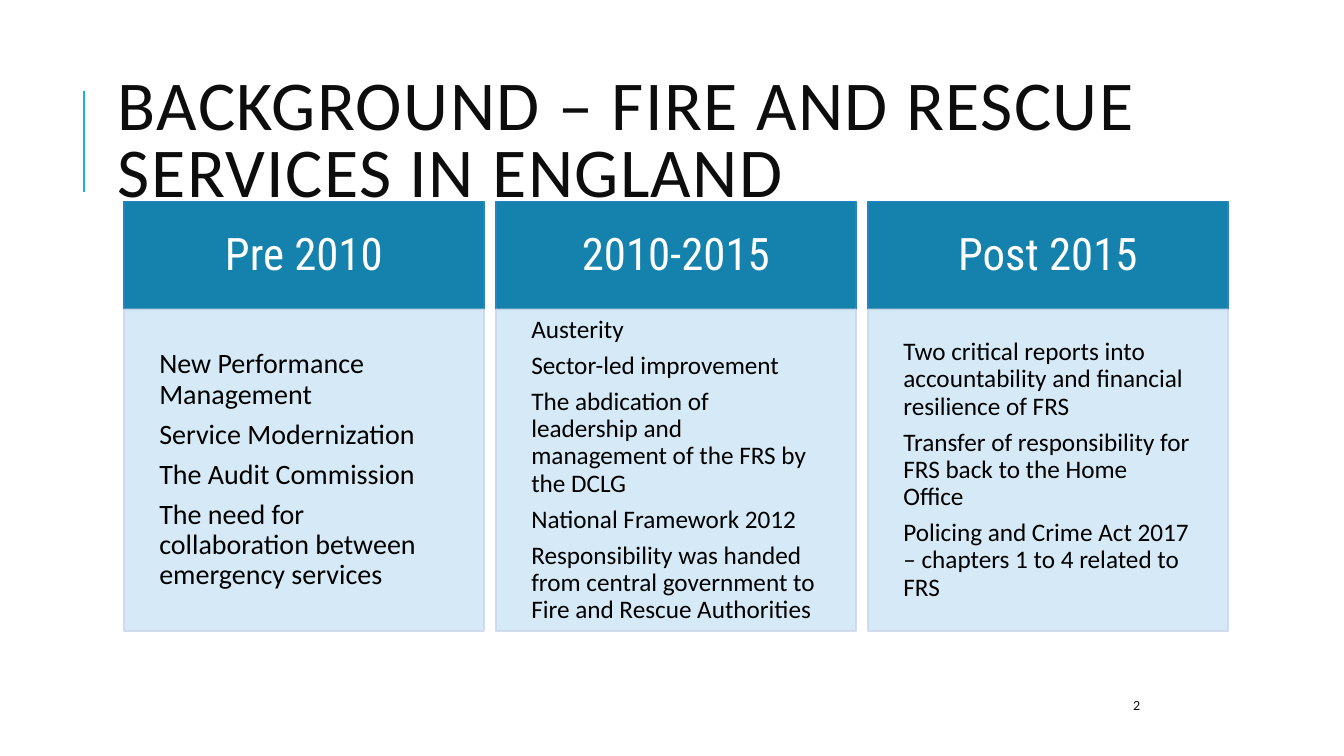
"""Build the slide on the background of fire and rescue services in England."""
import pptx
import pptx.dml.color
import pptx.enum.shapes
import pptx.enum.text
import pptx.oxml
import pptx.oxml.ns
import pptx.util
from pptx.util import Inches

TITLE = "BACKGROUND – FIRE AND RESCUE SERVICES IN ENGLAND"
PAGE_NUMBER = "2"
PERIODS = [
    ("Pre 2010", 20, [
        "New Performance Management",
        "Service Modernization",
        "The Audit Commission",
        "The need for collaboration between emergency services",
    ]),
    ("2010-2015", 18, [
        "Austerity",
        "Sector-led improvement",
        "The abdication of leadership and management of the FRS by the DCLG",
        "National Framework 2012",
        "Responsibility was handed from central government to Fire and Rescue Authorities",
    ]),
    ("Post 2015", 18, [
        "Two critical reports into accountability and financial resilience of FRS",
        "Transfer of responsibility for FRS back to the Home Office",
        "Policing and Crime Act 2017 – chapters 1 to 4 related to FRS",
    ]),
]
COLORS = {
    "accent": "1CADE4", "ink": "0D0D0D", "body": "000000", "white": "FFFFFF",
    "header": "1482AC", "header_edge": "2683C6",
    "panel": "D1E7F6", "panel_edge": "CDD9EA",
}
LEFT, TOP, WIDTH, PITCH = 1.23, 2, 3.57, 3.69
HEADER_HEIGHT, PANEL_HEIGHT = 1.07, 3.19


def rgb(name):
    return pptx.dml.color.RGBColor.from_string(COLORS[name])


def write(holder, lines, size, color, font="Calibri", inset=0.13, align="LEFT",
          line_spacing=1.0, space_after=0, tracking=0):
    frame = holder.text_frame
    frame.word_wrap = True
    frame.vertical_anchor = pptx.enum.text.MSO_ANCHOR.MIDDLE
    frame.margin_left = frame.margin_right = Inches(inset)
    frame.margin_top = frame.margin_bottom = Inches(inset)
    frame.text = "\n".join(lines)
    for paragraph in frame.paragraphs:
        paragraph.alignment = getattr(pptx.enum.text.PP_ALIGN, align)
        paragraph.line_spacing = line_spacing
        paragraph.space_before = pptx.util.Pt(0)
        paragraph.space_after = pptx.util.Pt(space_after)
        style = paragraph.runs[0].font
        style.name, style.size = font, pptx.util.Pt(size)
        style.color.rgb = rgb(color)
        if tracking:
            paragraph.runs[0]._r.get_or_add_rPr().set("spc", str(tracking * 100))


def add_box(slide, left, top, width, height, fill, edge, opacity=100):
    box = slide.shapes.add_shape(pptx.enum.shapes.MSO_SHAPE.RECTANGLE, Inches(left),
                                 Inches(top), Inches(width), Inches(height))
    box.shadow.inherit = False
    box.fill.solid()
    box.fill.fore_color.rgb = rgb(fill)
    box.line.color.rgb = rgb(edge)
    box.line.width = pptx.util.Pt(1.25)
    if opacity < 100:
        for color in box._element.spPr.iter(pptx.oxml.ns.qn("a:srgbClr")):
            alpha = color.makeelement(pptx.oxml.ns.qn("a:alpha"), {"val": str(opacity * 1000)})
            color.append(alpha)
    return box


def add_label(slide, left, top, width, height, text, **style):
    label = slide.shapes.add_textbox(Inches(left), Inches(top), Inches(width), Inches(height))
    write(label, [text], **style)


def main():
    deck = pptx.Presentation()
    deck.slide_width, deck.slide_height = Inches(13.33), Inches(7.5)
    slide = deck.slides.add_slide(deck.slide_layouts[6])

    title_rule = slide.shapes.add_connector(pptx.enum.shapes.MSO_CONNECTOR.STRAIGHT, Inches(0.83),
                                            Inches(1.9), Inches(0.83), Inches(0.9))
    title_rule.line.color.rgb = rgb("accent")
    title_rule.line.width = pptx.util.Pt(1.5)
    properties = title_rule._element.spPr
    properties.append(properties.makeelement(pptx.oxml.ns.qn("a:effectLst"), {}))

    add_label(slide, 1.04, 1.03, 12.48, 0.8, TITLE, size=50, color="ink",
              line_spacing=0.8, tracking=1)
    add_label(slide, 11.11, 6.76, 2.17, 0.46, PAGE_NUMBER, size=10, color="ink")

    for column, (period, size, points) in enumerate(PERIODS):
        left = LEFT + column * PITCH
        header = add_box(slide, left, TOP, WIDTH, HEADER_HEIGHT, "header", "header_edge")
        write(header, [period], 32, "white", font="Roboto Condensed", inset=0.28,
              align="CENTER", line_spacing=0.9, space_after=0.35 * 32)
        panel = add_box(slide, left, TOP + HEADER_HEIGHT, WIDTH, PANEL_HEIGHT,
                        "panel", "panel_edge", opacity=90)
        write(panel, points, size, "body", inset=0.35, line_spacing=0.9,
              space_after=0.35 * size)

    deck.save("out.pptx")


if __name__ == "__main__":
    main()
